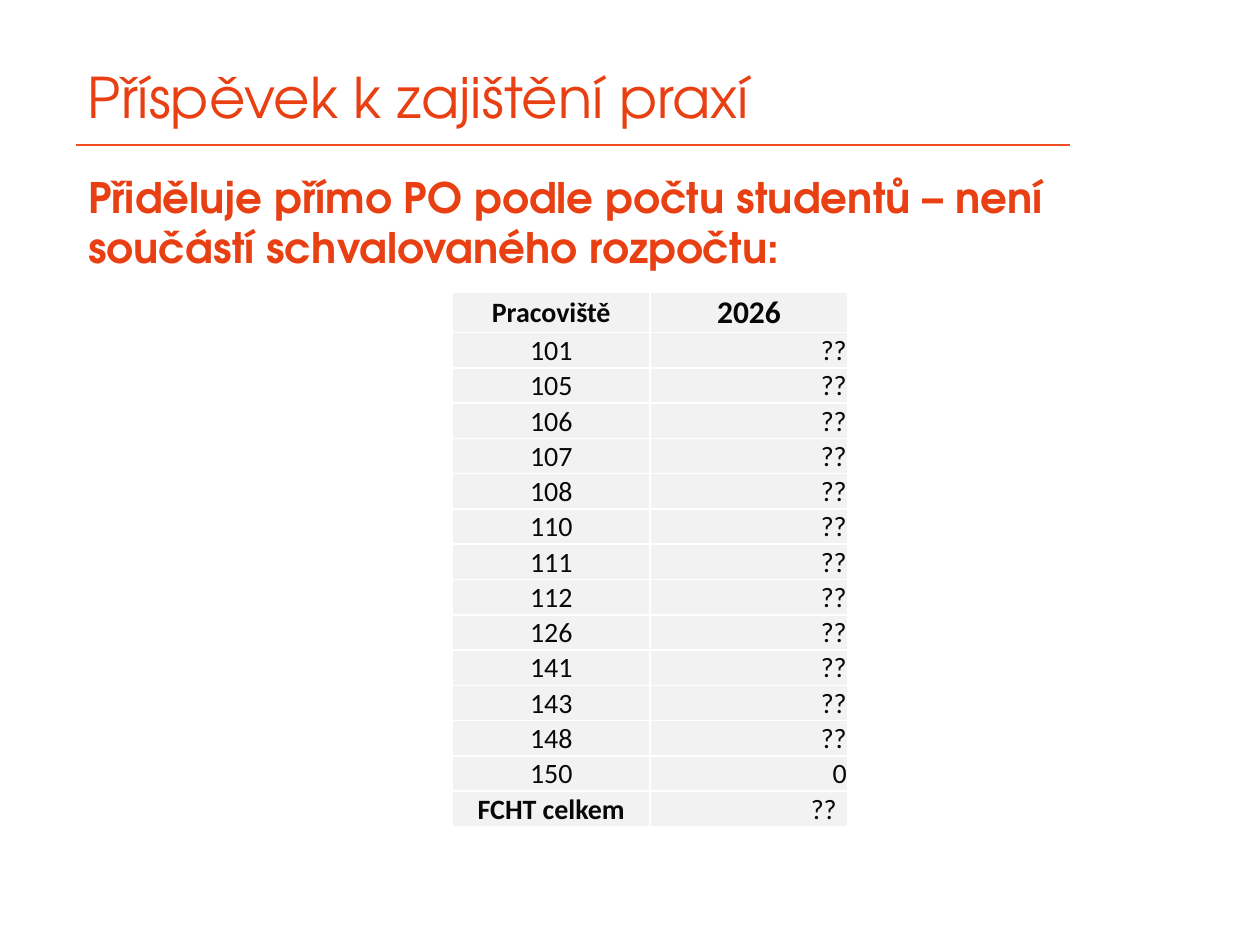
import pptx
import pptx.util
import pptx.dml.color
import pptx.enum.shapes
import pptx.enum.text
import pptx.oxml.ns
from lxml import etree

Inches = pptx.util.Inches
Pt = pptx.util.Pt
RGBColor = pptx.dml.color.RGBColor
Align = pptx.enum.text.PP_ALIGN
Anchor = pptx.enum.text.MSO_ANCHOR

ORANGE = RGBColor(0xE8, 0x40, 0x13)
RULE_ORANGE = RGBColor(0xF0, 0x4E, 0x23)
INK = RGBColor(0x08, 0x08, 0x08)
CELL_GREY = RGBColor(0xF2, 0xF2, 0xF2)

TITLE = "Příspěvek k zajištění praxí"
MESSAGE = "Přiděluje přímo PO podle počtu studentů – není součástí schvalovaného rozpočtu:"
HEADER = ("Pracoviště", "2026")
WORKPLACES = ("101", "105", "106", "107", "108", "110", "111",
              "112", "126", "141", "143", "148")
ROWS = [HEADER, *((workplace, "??") for workplace in WORKPLACES),
        ("150", "0"), ("FCHT celkem", "??")]

LEFT = 0.6
HEADER_HEIGHT, ROW_HEIGHT = 0.32, 0.28
COLUMN_WIDTH = 1.57


def style(paragraph, font_name, size, color, bold=False):
    paragraph.font.name = font_name
    paragraph.font.size = Pt(size)
    paragraph.font.color.rgb = color
    paragraph.font.bold = bold


def add_text(slide, text, top, width, height, size, bold, anchor):
    frame = slide.shapes.add_textbox(
        Inches(LEFT), Inches(top), Inches(width), Inches(height)).text_frame
    frame.word_wrap = True
    frame.vertical_anchor = anchor
    paragraph = frame.paragraphs[0]
    paragraph.text = text
    style(paragraph, "TeX Gyre Adventor", size, ORANGE, bold)
    return paragraph


def add_rule(slide):
    rule = slide.shapes.add_connector(
        pptx.enum.shapes.MSO_CONNECTOR.STRAIGHT,
        Inches(LEFT), Inches(1.15), Inches(8.49), Inches(1.15))
    rule.line.color.rgb = RULE_ORANGE
    rule.line.width = Pt(1)
    etree.SubElement(rule.element.spPr, pptx.oxml.ns.qn("a:effectLst"))


def add_contributions(slide):
    last = len(ROWS) - 1
    contributions = slide.shapes.add_table(
        len(ROWS), len(HEADER), Inches(3.59), Inches(2.32),
        Inches(COLUMN_WIDTH * len(HEADER)),
        Inches(HEADER_HEIGHT + ROW_HEIGHT * last)).table
    contributions.first_row = False
    contributions.horz_banding = False
    for column in contributions.columns:
        column.width = Inches(COLUMN_WIDTH)
    for r, values in enumerate(ROWS):
        contributions.rows[r].height = Inches(ROW_HEIGHT if r else HEADER_HEIGHT)
        for c, value in enumerate(values):
            is_amount = r > 0 and c == 1
            cell = contributions.cell(r, c)
            cell.fill.solid()
            cell.fill.fore_color.rgb = CELL_GREY
            cell.vertical_anchor = Anchor.MIDDLE
            cell.margin_left = cell.margin_top = Inches(0.01)
            cell.margin_right = Inches(0.09 if is_amount and r == last else 0.01)
            cell.margin_bottom = 0
            paragraph = cell.text_frame.paragraphs[0]
            paragraph.text = value
            paragraph.alignment = Align.RIGHT if is_amount else Align.CENTER
            style(paragraph, "Calibri", 18 if (r, c) == (0, 1) else 16, INK,
                  r in (0, last) and not is_amount)


def main():
    presentation = pptx.Presentation()
    presentation.slide_width = Inches(10)
    presentation.slide_height = Inches(7.5)
    slide = presentation.slides.add_slide(presentation.slide_layouts[6])
    add_rule(slide)
    title = add_text(slide, TITLE, 0.52, 8, 0.55, 32, False, Anchor.MIDDLE)
    title.line_spacing = 0.9
    add_text(slide, MESSAGE, 1.31, 9.11, 5.57, 24, True, Anchor.TOP)
    add_contributions(slide)
    presentation.save("out.pptx")


if __name__ == "__main__":
    main()
